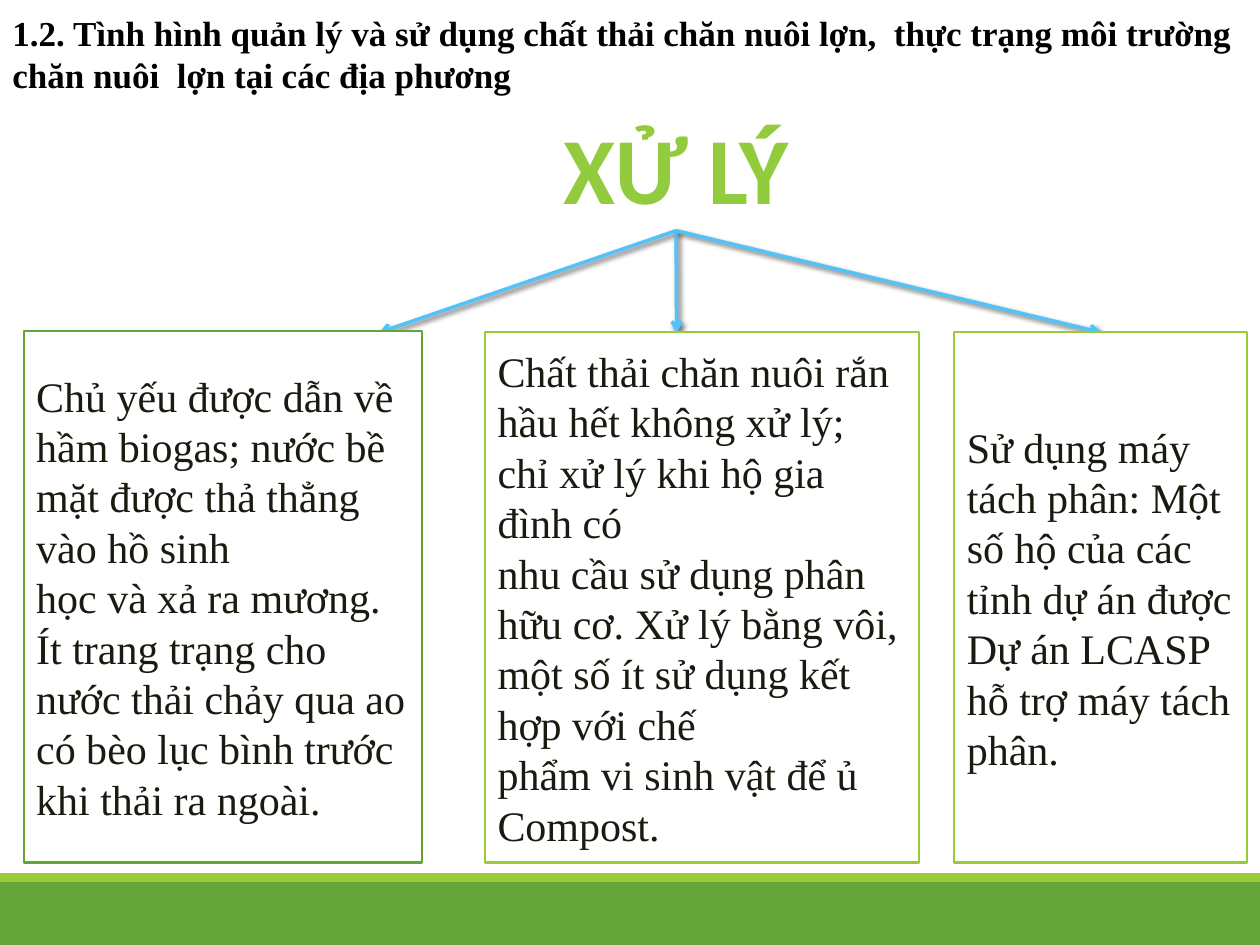
from dataclasses import dataclass
from lxml import etree
from pptx import Presentation
from pptx.dml.color import RGBColor
from pptx.enum import shapes as kinds, text as txt
from pptx.oxml import ns
from pptx.util import Cm, Pt


@dataclass(frozen=True)
class Theme:
    green: str = "63A537"
    lime: str = "99CB38"
    title: str = "92CC3E"
    arrow: str = "51C3F9"
    ink: str = "1B1A10"
    black: str = "000000"
    white: str = "FFFFFF"
    serif: str = "Times New Roman"
    sans: str = "Calibri"
    head: int = 20
    body: int = 24
    big: int = 54


THEME = Theme()
HEAD = ("1.2. Tình hình quản lý và sử dụng chất thải chăn nuôi lợn,  "
        "thực trạng môi trường chăn nuôi  lợn tại các địa phương")
# left, top, width, border, arrow end (None: middle of the top side), wording
CARDS = [
    (0.48, 6.68, 8.03, THEME.green, 7.65,
     "Chủ yếu được dẫn về hầm biogas; nước bề mặt được thả thẳng vào hồ sinh\n"
     "học và xả ra mương. Ít trang trạng cho nước thải chảy qua ao có bèo lục "
     "bình trước khi thải ra ngoài."),
    (9.78, 6.7, 8.74, THEME.lime, 13.64,
     "Chất thải chăn nuôi rắn hầu hết không xử lý; chỉ xử lý khi hộ gia đình có\n"
     "nhu cầu sử dụng phân hữu cơ. Xử lý bằng vôi, một số ít sử dụng kết hợp "
     "với chế\nphẩm vi sinh vật để ủ Compost."),
    (19.24, 6.7, 5.9, THEME.lime, None,
     "Sử dụng máy tách phân: Một số hộ của các tỉnh dự án được Dự án LCASP "
     "hỗ trợ máy tách phân."),
]


def rgb(code):
    return RGBColor.from_string(code)


def write(shape, words, size, color, face, bold=False, align=txt.PP_ALIGN.LEFT):
    para = shape.text_frame.paragraphs[0]
    para.text = words
    para.alignment = align
    font = para.font
    font.name, font.size, font.bold = face, Pt(size), bold
    font.color.rgb = rgb(color)


def rect(slide, box, fill, line=None):
    shape = slide.shapes.add_shape(kinds.MSO_SHAPE.RECTANGLE, *map(Cm, box))
    shape.shadow.inherit = False
    shape.fill.solid()
    shape.fill.fore_color.rgb = rgb(fill)
    if line:
        shape.line.color.rgb = rgb(line)
        shape.line.width = Pt(1.25)
    else:
        shape.line.fill.background()
    return shape


def footer(slide, box):
    left, top, width, height = box
    strip = 0.18
    rect(slide, (left, top + strip, width, height - strip), THEME.green)
    rect(slide, (left, top, width, strip), THEME.lime)


def label(slide, box, wrap, *style):
    shape = slide.shapes.add_textbox(*map(Cm, box))
    shape.text_frame.word_wrap = wrap
    write(shape, *style)
    return shape


def card(slide, box, border, words):
    shape = rect(slide, box, THEME.white, border)
    frame = shape.text_frame
    frame.word_wrap = True
    frame.vertical_anchor = txt.MSO_ANCHOR.MIDDLE
    write(shape, words, THEME.body, THEME.ink, THEME.serif)
    return shape


def arrow(slide, source, end):
    """Draw an arrow with a soft shadow from the bottom of source."""
    line = slide.shapes.add_connector(
        kinds.MSO_CONNECTOR.STRAIGHT, 0, 0, *map(Cm, end))
    line.begin_connect(source, 2)
    line.line.color.rgb = rgb(THEME.arrow)
    line.line.width = Pt(2)
    etree.SubElement(line.line._get_or_add_ln(), ns.qn("a:tailEnd"), type="arrow")
    props = line._element.spPr
    effects = etree.SubElement(props, ns.qn("a:effectLst"))
    shade = etree.SubElement(
        effects, ns.qn("a:outerShdw"), blurRad=str(Pt(3)), dist=str(Pt(2)),
        dir="2700000", algn="tl", rotWithShape="0")
    color = etree.SubElement(shade, ns.qn("a:srgbClr"), val=THEME.black)
    etree.SubElement(color, ns.qn("a:alpha"), val="60000")
    return line


def diagram(slide, box):
    """Place the title, its arrows and the cards they lead to."""
    x, y, width, height = box
    title = label(slide, (x + 11.08, y, 5.1, 2.56), False, "XỬ LÝ", THEME.big,
                  THEME.title, THEME.sans, True, txt.PP_ALIGN.CENTER)
    # Arrows come first, so that the cards lie over their heads.
    lines = [arrow(slide, title, (x + (end or left + wide / 2), 6.7))
             for left, top, wide, border, end, words in CARDS]
    for line, (left, top, wide, border, end, words) in zip(lines, CARDS):
        place = (x + left, top, wide, y + height - top)
        shape = card(slide, place, border, words)
        if end is None:
            line.end_connect(shape, 0)


def main():
    deck = Presentation()
    deck.slide_width, deck.slide_height = Cm(25.4), Cm(19.05)
    slide = deck.slides.add_slide(deck.slide_layouts[6])
    footer(slide, (0, 17.6, 25.4, 1.45))
    label(slide, (0, 0.1, 25.4, 1.96), True, HEAD, THEME.head,
          THEME.black, THEME.serif, True)
    diagram(slide, (0, 2.09, 25.4, 15.3))
    deck.save("out.pptx")


if __name__ == "__main__":
    main()
